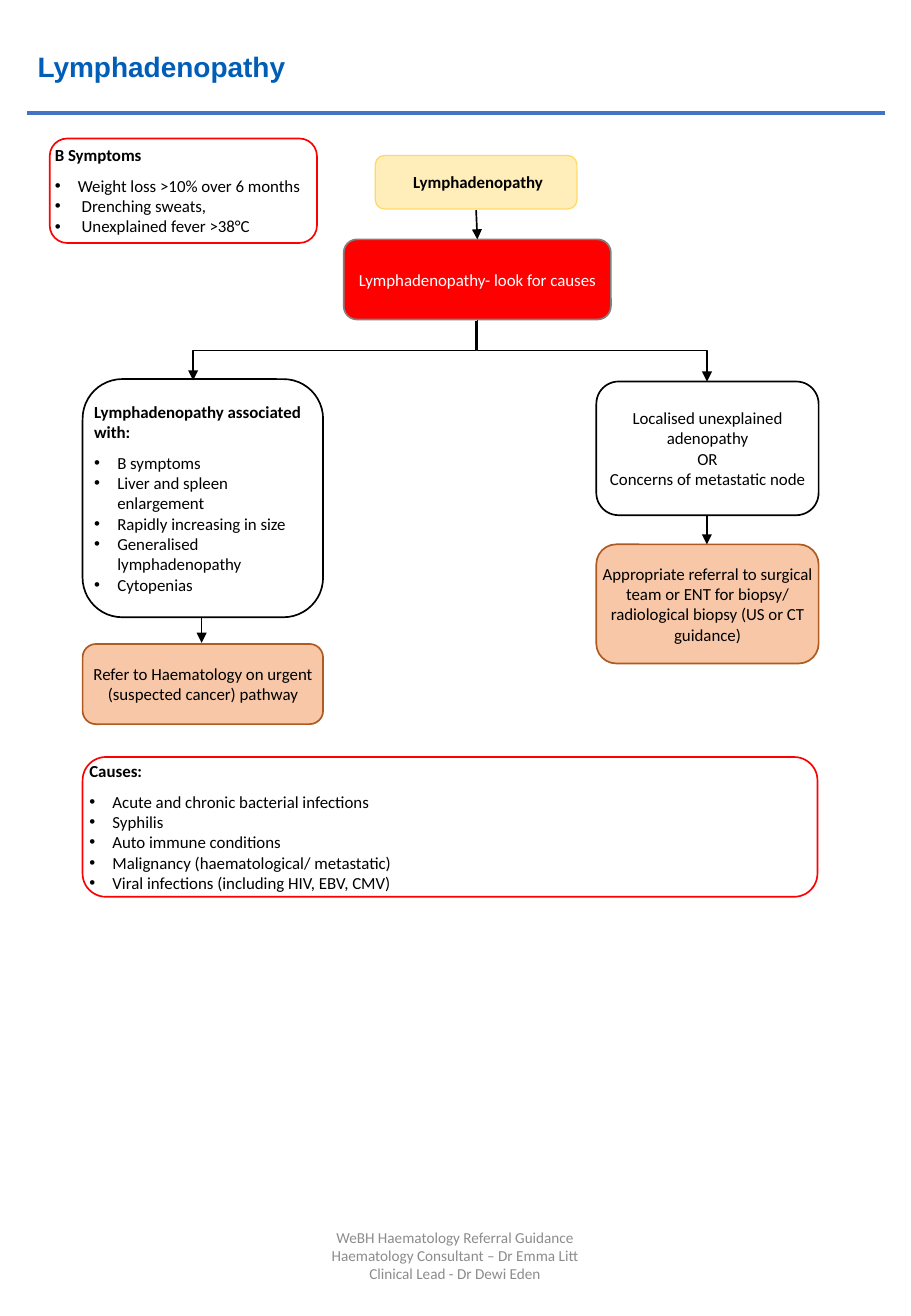
"""Build the one-page lymphadenopathy referral flowchart."""
from dataclasses import dataclass

from lxml.etree import SubElement
from pptx import Presentation
from pptx.dml.color import RGBColor
from pptx.enum.shapes import MSO_CONNECTOR, MSO_SHAPE
from pptx.enum.text import MSO_ANCHOR, PP_ALIGN
from pptx.oxml.ns import qn
from pptx.util import Inches, Pt

COLORS = {
    "title": "005EB8", "rule": "4472C4", "black": "000000", "white": "FFFFFF",
    "red": "FF0000", "grey": "808080", "footer": "8C8C8C", "cream": "FFEEB9",
    "gold": "FFD966", "peach": "F7C7A7", "brown": "AE5A21",
}


@dataclass
class Box:
    left: float
    top: float
    width: float
    height: float
    lines: tuple[str, ...]
    fill: str = "white"
    line: str = "black"
    color: str = "black"
    bold: bool = False
    line_width: float = 1


@dataclass
class ListBox:
    left: float
    top: float
    width: float
    height: float
    heading: str
    items: tuple[str, ...]
    line: str = "red"


@dataclass
class Arrow:
    x1: float
    y1: float
    x2: float
    y2: float
    elbow: bool = False


BOXES = (
    Box(3.09, 1.28, 1.66, 0.44, (" Lymphadenopathy",), "cream", "gold",
        bold=True, line_width=0.75),
    Box(2.83, 1.97, 2.2, 0.66, ("Lymphadenopathy- look for causes",),
        "red", "grey", "white"),
    Box(0.68, 5.3, 1.98, 0.66,
        ("Refer to Haematology on urgent (suspected cancer) pathway",),
        "peach", "brown"),
    Box(4.91, 3.14, 1.83, 1.1,
        ("Localised unexplained adenopathy", "OR", "Concerns of metastatic node")),
    Box(4.91, 4.48, 1.83, 0.98,
        ("Appropriate referral to surgical team or ENT for biopsy/ "
         "radiological biopsy (US or CT guidance)",), "peach", "brown"),
)
LIST_BOXES = (
    ListBox(0.41, 1.14, 2.2, 0.86, "B Symptoms",
            ("Weight loss >10% over 6 months", " Drenching sweats,",
             " Unexplained fever >38°C")),
    ListBox(0.68, 3.12, 1.98, 1.96, "Lymphadenopathy associated with:",
            ("B symptoms", "Liver and spleen enlargement",
             "Rapidly increasing in size", "Generalised lymphadenopathy",
             "Cytopenias"), "black"),
    ListBox(0.68, 6.23, 6.05, 1.15, "Causes:",
            ("Acute and chronic bacterial infections", "Syphilis",
             "Auto immune conditions", "Malignancy (haematological/ metastatic)",
             "Viral infections (including HIV, EBV, CMV)")),
)
ARROWS = (
    Arrow(3.92, 1.73, 3.93, 1.97),
    Arrow(3.92, 2.64, 1.59, 3.13, True),
    Arrow(3.93, 2.63, 5.82, 3.14, True),
    Arrow(5.82, 4.24, 5.82, 4.48),
    Arrow(1.66, 5.08, 1.66, 5.29),
)


def rgb(name: str) -> RGBColor:
    return RGBColor.from_string(COLORS[name])


def add_text(tf, text: str, *, size=10, font="Calibri", color="black",
             bold=False, align=PP_ALIGN.LEFT, after=0, bullet=False):
    p = tf.paragraphs[0] if not tf.text else tf.add_paragraph()
    p.alignment = align
    p.space_after = Pt(after)
    if bullet:
        pPr = p._p.get_or_add_pPr()
        pPr.set("marL", str(Inches(0.19)))
        pPr.set("indent", str(-Inches(0.19)))
        SubElement(pPr, qn("a:buFont"), typeface="Arial")
        SubElement(pPr, qn("a:buChar"), char="•")
    r = p.add_run()
    r.text = text
    r.font.size = Pt(size)
    r.font.name = font
    r.font.bold = bold
    r.font.color.rgb = rgb(color)


def setup_frame(sp, margin_x: float = 0, margin_y: float = 0):
    tf = sp.text_frame
    tf.word_wrap = True
    tf.vertical_anchor = MSO_ANCHOR.MIDDLE
    tf.margin_left = tf.margin_right = Inches(margin_x)
    tf.margin_top = tf.margin_bottom = Inches(margin_y)
    return tf


def add_rounded(s, b: Box | ListBox, fill: str, line_width: float):
    sp = s.shapes.add_shape(MSO_SHAPE.ROUNDED_RECTANGLE, Inches(b.left),
                            Inches(b.top), Inches(b.width), Inches(b.height))
    sp.shadow.inherit = False
    sp.fill.solid()
    sp.fill.fore_color.rgb = rgb(fill)
    sp.line.color.rgb = rgb(b.line)
    sp.line.width = Pt(line_width)
    return setup_frame(sp)


def add_box(s, b: Box) -> None:
    tf = add_rounded(s, b, b.fill, b.line_width)
    for text in b.lines:
        add_text(tf, text, color=b.color, bold=b.bold, align=PP_ALIGN.CENTER)


def add_list_box(s, b: ListBox) -> None:
    tf = add_rounded(s, b, "white", 1)
    add_text(tf, b.heading, bold=True, after=6)
    for item in b.items:
        add_text(tf, item, bullet=True)


def add_line(s, kind, x1: float, y1: float, x2: float, y2: float,
             color: str = "black", width: float = 1):
    cn = s.shapes.add_connector(kind, Inches(x1), Inches(y1),
                                Inches(x2), Inches(y2))
    cn.line.color.rgb = rgb(color)
    cn.line.width = Pt(width)
    SubElement(cn._element.spPr, qn("a:effectLst"))
    return cn


def add_arrow(s, a: Arrow) -> None:
    if a.elbow:
        cx, cy = (a.x1 + a.x2) / 2, (a.y1 + a.y2) / 2
        half_w, half_h = (a.y2 - a.y1) / 2, abs(a.x2 - a.x1) / 2
        rightward = a.x2 > a.x1
        dx = half_w if rightward else -half_w
        cn = add_line(s, MSO_CONNECTOR.ELBOW, cx + dx, cy - half_h,
                      cx - dx, cy + half_h)
        degrees = 270 if rightward else 90
        cn._element.spPr.find(qn("a:xfrm")).set("rot", str(degrees * 60000))
    else:
        cn = add_line(s, MSO_CONNECTOR.STRAIGHT, a.x1, a.y1, a.x2, a.y2)
    SubElement(cn._element.spPr.find(qn("a:ln")), qn("a:tailEnd"), type="triangle")


def add_label(s, left: float, top: float, width: float, height: float,
              lines: tuple[str, ...], margin_x: float, margin_y: float, **fmt) -> None:
    sp = s.shapes.add_textbox(Inches(left), Inches(top), Inches(width), Inches(height))
    tf = setup_frame(sp, margin_x, margin_y)
    for text in lines:
        add_text(tf, text, **fmt)


def main() -> None:
    prs = Presentation()
    prs.slide_width, prs.slide_height = Inches(7.5), Inches(10.83)
    s = prs.slides.add_slide(prs.slide_layouts[6])
    add_label(s, 0.23, 0.21, 5.24, 0.67, ("Lymphadenopathy",), 0.08, 0.04,
              size=16.6, font="Arial", color="title", bold=True)
    add_line(s, MSO_CONNECTOR.STRAIGHT, 0.22, 0.93, 7.29, 0.93, "rule", 2.75)
    for b in BOXES:
        add_box(s, b)
    for b in LIST_BOXES:
        add_list_box(s, b)
    for a in ARROWS:
        add_arrow(s, a)
    add_label(s, 2.48, 10.04, 2.53, 0.58,
              ("WeBH Haematology Referral Guidance",
               "Haematology Consultant – Dr Emma Litt Clinical Lead - Dr Dewi Eden"),
              0.1, 0.05, size=9, color="footer", align=PP_ALIGN.CENTER)
    prs.save("out.pptx")


if __name__ == "__main__":
    main()
